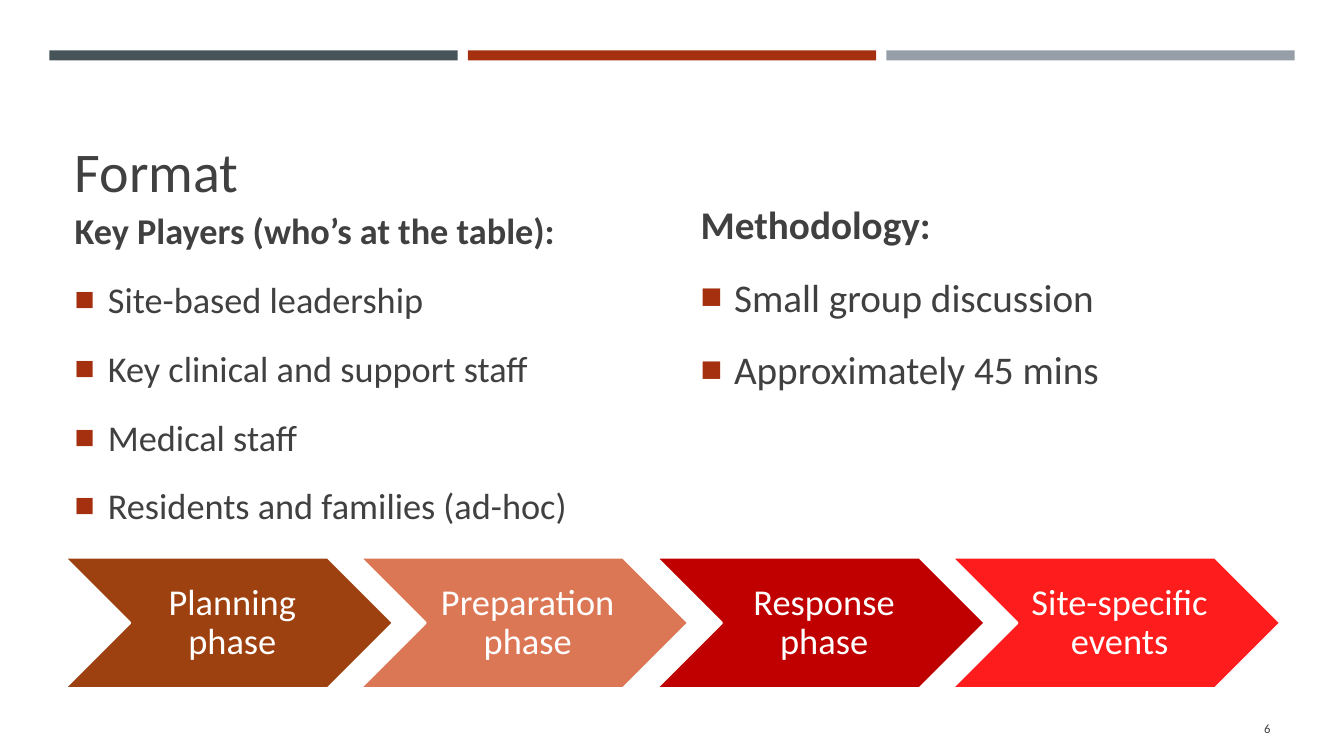
import lxml.etree
import pptx
import pptx.dml.color
import pptx.enum.shapes
import pptx.enum.text
import pptx.oxml.ns
import pptx.util

EMU_PER_PX = 9144
FONT = "Calibri"
TEXT_COLOR = "404040"
ACCENT = "A5300F"
MARGIN = 64
CONTENT_WIDTH = 1206

BARS = ["465359", ACCENT, "969FA7"]
KEY_PLAYERS = [
    "Site-based leadership",
    "Key clinical and support staff",
    "Medical staff",
    "Residents and families (ad-hoc)",
]
METHODOLOGY = ["Small group discussion", "Approximately 45 mins"]
PHASES = [
    ("Planning phase", "9E4110", 100),
    ("Preparation phase", "DC7756", 100),
    ("Response phase", "C00000", 100),
    ("Site-specific events", "FF0000", 89),
]


def px(length):
    return pptx.util.Emu(length * EMU_PER_PX)


def color(value):
    return pptx.dml.color.RGBColor.from_string(value)


def place(shape, left, top, width, height):
    shape.left, shape.top = px(left), px(top)
    shape.width, shape.height = px(width), px(height)


def add_run(paragraph, text, size, text_color=TEXT_COLOR, bold=False):
    run = paragraph.add_run()
    run.text = text
    run.font.name = FONT
    run.font.size = pptx.util.Pt(size)
    run.font.bold = bold
    run.font.color.rgb = color(text_color)


def add_element(parent, tag, **attributes):
    return lxml.etree.SubElement(parent, pptx.oxml.ns.qn(tag), attributes)


def set_bullet(paragraph, character):
    properties = paragraph._p.get_or_add_pPr()
    indent = px(33) if character else 0
    properties.set("marL", str(indent))
    properties.set("indent", str(-indent))
    if not character:
        add_element(properties, "a:buNone")
        return
    bullet_color = add_element(properties, "a:buClr")
    add_element(bullet_color, "a:srgbClr", val=ACCENT)
    add_element(properties, "a:buSzPct", val="92000")
    add_element(properties, "a:buChar", char=character)


def prepare_frame(shape, anchor):
    frame = shape.text_frame
    frame.word_wrap = True
    frame.auto_size = pptx.enum.text.MSO_AUTO_SIZE.NONE
    frame.vertical_anchor = anchor
    return frame


def fill_title(title, text):
    place(title, MARGIN, 77, CONTENT_WIDTH, 130)
    frame = prepare_frame(title, pptx.enum.text.MSO_ANCHOR.BOTTOM)
    paragraph = frame.paragraphs[0]
    paragraph.alignment = pptx.enum.text.PP_ALIGN.LEFT
    add_run(paragraph, text, 40)


def fill_list(body, heading, items, size):
    frame = prepare_frame(body, pptx.enum.text.MSO_ANCHOR.TOP)
    for index, text in enumerate([heading] + items):
        paragraph = frame.add_paragraph() if index else frame.paragraphs[0]
        paragraph.space_before = pptx.util.Pt(12)
        paragraph.space_after = pptx.util.Pt(6)
        set_bullet(paragraph, "■" if index else None)
        add_run(paragraph, text, size, bold=index == 0)


def add_filled_shape(slide, kind, box, fill):
    shape = slide.shapes.add_shape(kind, *[px(length) for length in box])
    shape.shadow.inherit = False
    shape.fill.solid()
    shape.fill.fore_color.rgb = color(fill)
    shape.line.fill.background()
    return shape


def add_bar(slide, index, fill):
    box = (49 + 415 * index, 50, 405, 10)
    add_filled_shape(slide, pptx.enum.shapes.MSO_SHAPE.RECTANGLE, box, fill)


def add_phase(slide, index, text, fill, opacity):
    width = 326
    step = (CONTENT_WIDTH - width) / (len(PHASES) - 1)
    box = (MARGIN + round(index * step), 553, width, 130)
    chevron = add_filled_shape(slide, pptx.enum.shapes.MSO_SHAPE.CHEVRON, box, fill)
    chevron.line.color.rgb = color("FFFFFF")
    chevron.line.width = pptx.util.Pt(1.75)
    if opacity < 100:
        fill_color = chevron._element.spPr.find(
            pptx.oxml.ns.qn("a:solidFill") + "/" + pptx.oxml.ns.qn("a:srgbClr")
        )
        add_element(fill_color, "a:alpha", val=str(opacity * 1000))
    frame = prepare_frame(chevron, pptx.enum.text.MSO_ANCHOR.MIDDLE)
    frame.margin_left = px(11)
    frame.margin_right = frame.margin_top = frame.margin_bottom = px(4)
    paragraph = frame.paragraphs[0]
    paragraph.alignment = pptx.enum.text.PP_ALIGN.CENTER
    paragraph.line_spacing = 0.9
    add_run(paragraph, text, 26, "FFFFFF")


def add_slide_number(slide, text):
    box = slide.shapes.add_textbox(px(1155), px(703), px(115), px(40))
    frame = prepare_frame(box, pptx.enum.text.MSO_ANCHOR.MIDDLE)
    paragraph = frame.paragraphs[0]
    paragraph.alignment = pptx.enum.text.PP_ALIGN.RIGHT
    add_run(paragraph, text, 9)


def main():
    presentation = pptx.Presentation()
    presentation.slide_width = px(1333)
    presentation.slide_height = px(750)
    two_content = presentation.slide_layouts.get_by_name("Two Content")
    slide = presentation.slides.add_slide(two_content)
    title, players, methodology = slide.placeholders

    for index, fill in enumerate(BARS):
        add_bar(slide, index, fill)
    fill_title(title, "Format")
    place(players, MARGIN, 202, 600, 321)
    fill_list(players, "Key Players (who’s at the table):", KEY_PLAYERS, 25.9)
    place(methodology, 685, 194, 585, 321)
    fill_list(methodology, "Methodology:", METHODOLOGY, 28)
    for index, (text, fill, opacity) in enumerate(PHASES):
        add_phase(slide, index, text, fill, opacity)
    add_slide_number(slide, "6")

    presentation.save("out.pptx")


if __name__ == "__main__":
    main()
